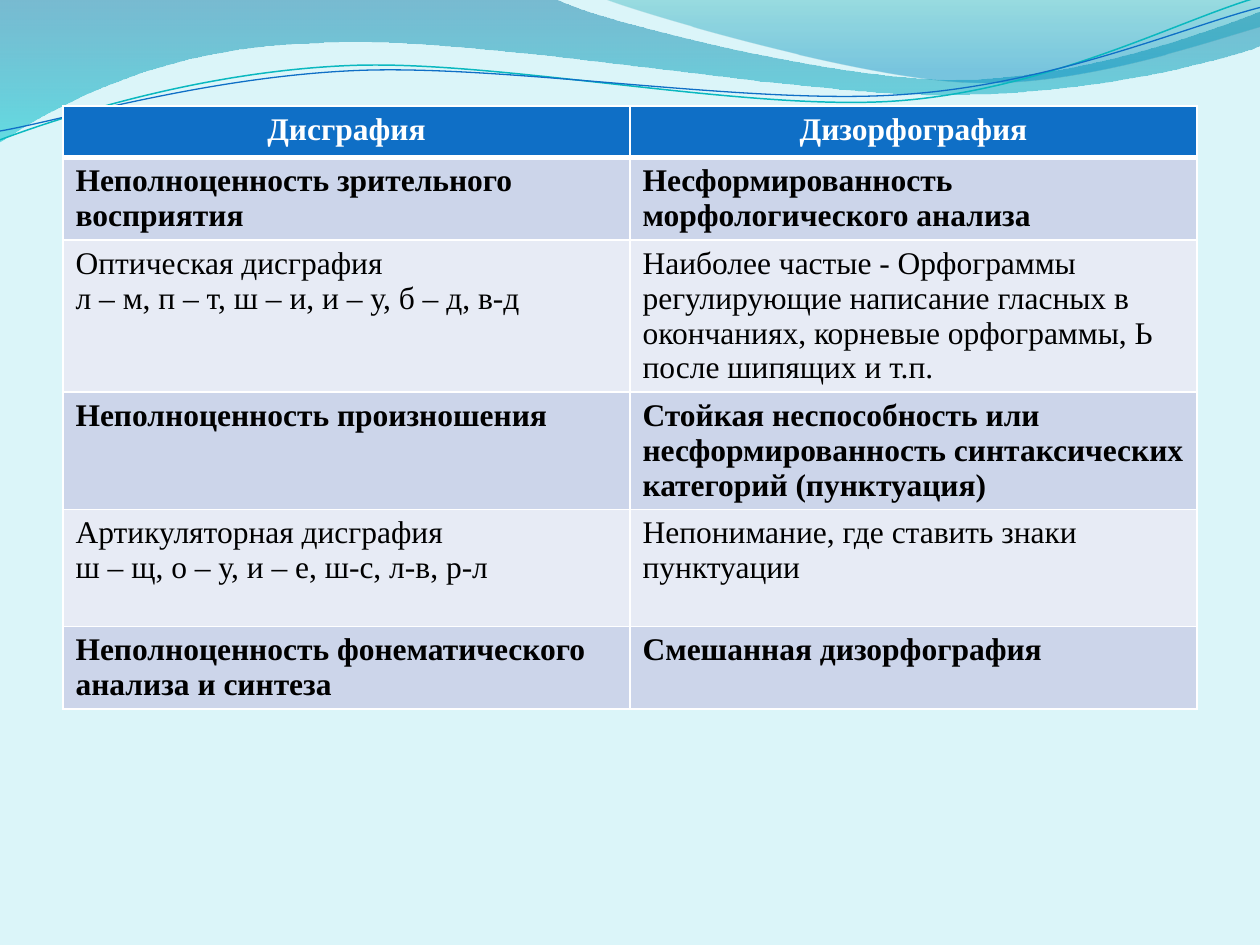
"""Build a slide with a table comparing dysgraphia and dysorthography under a wave header."""
import math

from lxml import etree
from pptx import Presentation
from pptx import util as u
from pptx.dml.color import RGBColor
from pptx.enum import text
from pptx.oxml import ns

THEME = {
    "font": "Times New Roman", "size": 18,
    "background": "DBF5F9", "header": "0F6FC6", "bands": ("CCD5EA", "E7EBF5"),
    "border": "FFFFFF", "header_text": "FFFFFF", "body_text": "000000",
    "deep_wave": ((0, "0074A1", 45), (100, "00C6CF", 55)),
    "light_wave": ((0, "00A1A9", 30), (80, "008BBF", 45)),
    "teal_line": "0AB8BF", "blue_line": "0F6FC6",
}


def draw_outline(slide, segments, closed):
    """Draw segments in inches: one point makes a line, three points make a Bezier curve."""
    start, *rest = [(u.Inches(x), u.Inches(y)) for segment in segments for x, y in segment]
    builder = slide.shapes.build_freeform(*start)
    builder.add_line_segments(rest, close=closed)
    shape = builder.convert_to_shape()
    shape.shadow.inherit = False
    lines = iter(shape.element.spPr.findall(".//" + ns.qn("a:lnTo")))
    for segment in segments[1:]:
        parts = [next(lines) for _ in segment]
        if len(parts) == 3:
            parts[0].tag = ns.qn("a:cubicBezTo")
            for part in parts[1:]:
                parts[0].append(part[0])
                part.getparent().remove(part)
    return shape


presentation = Presentation()
presentation.slide_width, presentation.slide_height = u.Inches(10), u.Inches(7.5)
slide = presentation.slides.add_slide(presentation.slide_layouts[6])
slide.background.fill.solid()
slide.background.fill.fore_color.rgb = RGBColor.from_string(THEME["background"])

deep_wave = [
    [(0, 0)],
    [(4.4, -0.01)],
    [(4.76, 0.17), (6.64, 0.63), (7.58, 0.63)],
    [(8.53, 0.63), (9.58, 0.26), (10, 0.09)],
    [(10.01, 0.36)],
    [(9.83, 0.44), (8.7, 0.76), (7.46, 0.75)],
    [(6.22, 0.75), (3.82, 0.28), (2.57, 0.34)],
    [(1.29, 0.36), (0.46, 0.83), (-0.01, 1.13)],
    [(0, 0)],
]
light_wave = [
    [(4.79, -0.01)],
    [(5.09, 0.11), (6.82, 0.62), (7.69, 0.65)],
    [(8.56, 0.69), (9.61, 0.32), (10, 0.21)],
    [(10, 0)],
    [(4.79, -0.01)],
]
for segments, name in ((deep_wave, "deep_wave"), (light_wave, "light_wave")):
    shape = draw_outline(slide, segments, True)
    shape.line.fill.background()
    shape.fill.gradient()
    shape.fill.gradient_angle = 270
    for stop, (position, color, _) in zip(shape.fill.gradient_stops, THEME[name]):
        stop.position = position / 100
        stop.color.rgb = RGBColor.from_string(color)
    colors = shape.element.spPr.findall(".//" + ns.qn("a:gs") + "/" + ns.qn("a:srgbClr"))
    for color, (_, _, opacity) in zip(colors, THEME[name]):
        etree.SubElement(color, ns.qn("a:alpha"), val=str(opacity * 1000))

teal_line = [
    [(0, 1.11)],
    [(0.48, 0.93), (1.58, 0.57), (2.77, 0.52)],
    [(3.95, 0.47), (5.93, 0.89), (7.13, 0.8)],
    [(8.33, 0.71), (9.38, 0.15), (9.98, -0.02)],
]
blue_line = [
    [(0, 1.04)],
    [(0.47, 0.96), (1.64, 0.61), (2.83, 0.56)],
    [(4.03, 0.51), (5.97, 0.84), (7.17, 0.75)],
    [(8.36, 0.67), (9.41, 0.21), (10, 0.06)],
]
tilt = 2.7
cosine, sine = math.cos(math.radians(tilt)), math.sin(math.radians(tilt))
for segments, name, width, (center_x, center_y) in (
    (teal_line, "teal_line", 0.85, (4.99, 0.58)),
    (blue_line, "blue_line", 0.75, (5, 0.59)),
):
    level = [[(center_x + (x - center_x) * cosine - (y - center_y) * sine,
               center_y + (x - center_x) * sine + (y - center_y) * cosine)
              for x, y in segment] for segment in segments]
    shape = draw_outline(slide, level, False)
    shape.rotation = 360 - tilt
    shape.fill.background()
    shape.line.color.rgb = RGBColor.from_string(THEME[name])
    shape.line.width = u.Pt(width)

rows = [
    (0.41, "Дисграфия", "Дизорфография"),
    (0.41, "Неполноценность зрительного восприятия", "Несформированность морфологического анализа"),
    (0.41, "Оптическая дисграфия\nл – м, п – т, ш – и, и – у, б – д, в-д",
     "Наиболее частые - Орфограммы регулирующие написание гласных в окончаниях, "
     "корневые орфограммы, Ь после шипящих и т.п."),
    (0.41, "Неполноценность произношения",
     "Стойкая неспособность или несформированность синтаксических категорий (пунктуация)"),
    (0.93, "Артикуляторная дисграфия\nш – щ, о – у, и – е, ш-с, л-в, р-л",
     "Непонимание, где ставить знаки пунктуации"),
    (0.41, "Неполноценность фонематического анализа и синтеза", "Смешанная дизорфография"),
]
frame = slide.shapes.add_table(
    len(rows), 2, u.Inches(0.5), u.Inches(0.84), u.Inches(9), u.Inches(5.11))
table = frame.table
table.horz_banding = False

for row_index, (row_height, *contents) in enumerate(rows):
    table.rows[row_index].height = u.Inches(row_height)
    is_header = row_index == 0
    fill_color = THEME["header"] if is_header else THEME["bands"][(row_index - 1) % 2]
    text_color = THEME["header_text" if is_header else "body_text"]
    font_format = {"name": THEME["font"], "size": u.Pt(THEME["size"]),
                   "bold": is_header or row_index % 2 == 1}
    border_widths = {"lnL": 1, "lnR": 1, "lnT": 3 if row_index == 1 else 1, "lnB": 3 if is_header else 1}
    for column_index, content in enumerate(contents):
        cell = table.cell(row_index, column_index)
        properties = cell._tc.get_or_add_tcPr()
        for side, width in border_widths.items():
            border = etree.SubElement(properties, ns.qn("a:" + side), w=str(u.Pt(width)))
            solid = etree.SubElement(border, ns.qn("a:solidFill"))
            etree.SubElement(solid, ns.qn("a:srgbClr"), val=THEME["border"])
        cell.fill.solid()
        cell.fill.fore_color.rgb = RGBColor.from_string(fill_color)
        cell.text_frame.text = content
        for paragraph in cell.text_frame.paragraphs:
            paragraph.alignment = text.PP_ALIGN.CENTER if is_header else text.PP_ALIGN.LEFT
            font = paragraph.runs[0].font
            for attribute, value in font_format.items():
                setattr(font, attribute, value)
            font.color.rgb = RGBColor.from_string(text_color)
frame.height = u.Inches(5.11)

presentation.save("out.pptx")
